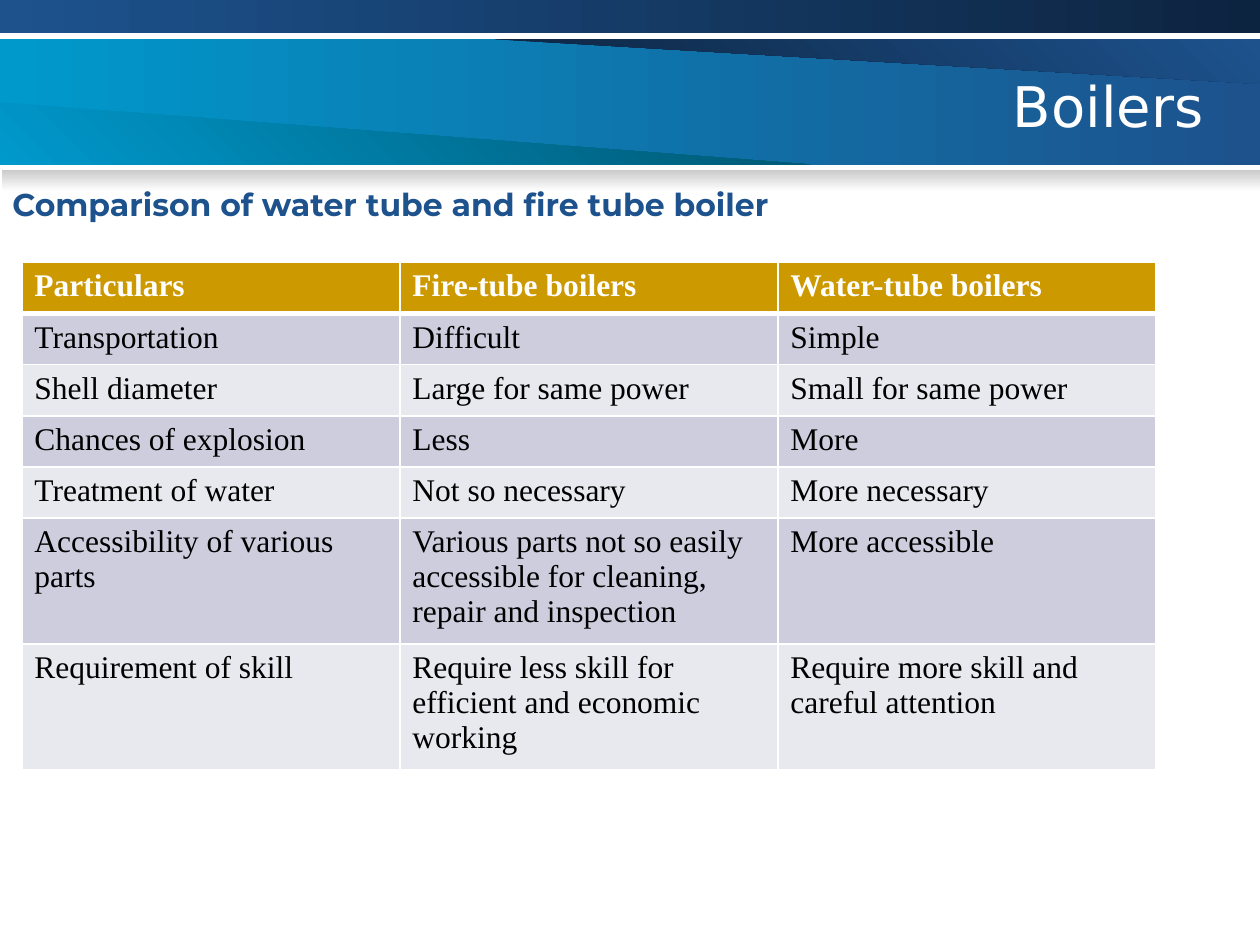
import pptx
import pptx.util
import pptx.dml.color
import pptx.enum.shapes
import pptx.enum.text
import pptx.oxml

Pt = pptx.util.Pt
RGBColor = pptx.dml.color.RGBColor

WHITE = RGBColor(0xFF, 0xFF, 0xFF)
BLACK = RGBColor(0x00, 0x00, 0x00)
NAVY = RGBColor(0x1D, 0x52, 0x8D)
DARK_NAVY = RGBColor(0x0D, 0x24, 0x40)
CYAN = RGBColor(0x00, 0x99, 0xCC)
DARK_CYAN = RGBColor(0x00, 0x55, 0x70)
GREY = RGBColor(0xCA, 0xCA, 0xCA)
GOLD = RGBColor(0xCC, 0x99, 0x00)
BAND_DARK = RGBColor(0xCD, 0xCD, 0xDE)
BAND_LIGHT = RGBColor(0xE8, 0xE8, 0xEF)


def paint_gradient(sp, start, end, angle):
    """Fill sp from start to end; angle is counter-clockwise in degrees."""
    sp.shadow.inherit = False
    sp.line.fill.background()
    sp.fill.gradient()
    sp.fill.gradient_angle = angle
    for stop, color in zip(sp.fill.gradient_stops, (start, end)):
        stop.color.rgb = color


def set_border(cell, side, width):
    cell._tc.get_or_add_tcPr().append(pptx.oxml.parse_xml(
        f'<a:ln{side} xmlns:a="http://schemas.openxmlformats.org/drawingml/2006/main" '
        f'w="{Pt(width)}"><a:solidFill><a:srgbClr val="{WHITE}"/></a:solidFill></a:ln{side}>'))


prs = pptx.Presentation()
prs.slide_width, prs.slide_height = Pt(720), Pt(540)
s = prs.slides.add_slide(prs.slide_layouts[6])

# Header bands: main band, its two wedges, top strip and the shade below
bands = [
    (0, 22.4, 720, 72, CYAN, NAVY, 0),
    (0, 0, 720, 18.8, NAVY, DARK_NAVY, 0),
    (0.9, 97, 719.1, 12.4, GREY, WHITE, 270),
]
for left, top, width, height, start, end, angle in bands:
    sp = s.shapes.add_shape(pptx.enum.shapes.MSO_SHAPE.RECTANGLE,
                            Pt(left), Pt(top), Pt(width), Pt(height))
    paint_gradient(sp, start, end, angle)

wedges = [
    ([(283, 22.4), (720, 48), (720, 22.4)], DARK_NAVY, NAVY),
    ([(0, 58.5), (463, 94), (0, 94)], CYAN, DARK_CYAN),
]
for corners, start, end in wedges:
    points = [(Pt(x), Pt(y)) for x, y in corners]
    builder = s.shapes.build_freeform(*points[0])
    builder.add_line_segments(points[1:], close=True)
    paint_gradient(builder.convert_to_shape(), start, end, 45)

# Title and subtitle
texts = [
    ("Boilers", (93.6, 31.7, 601.2, 56.9), "DejaVu Sans", 32, WHITE, False,
     pptx.enum.text.PP_ALIGN.RIGHT, pptx.enum.text.MSO_ANCHOR.MIDDLE),
    ("Comparison of water tube and fire tube boiler", (0, 102.3, 479.5, 29), "Montserrat", 18,
     NAVY, True, pptx.enum.text.PP_ALIGN.LEFT, pptx.enum.text.MSO_ANCHOR.TOP),
]
for text, box, font, size, color, bold, align, anchor in texts:
    tf = s.shapes.add_textbox(*map(Pt, box)).text_frame
    tf.word_wrap = align == pptx.enum.text.PP_ALIGN.RIGHT
    tf.vertical_anchor = anchor
    p = tf.paragraphs[0]
    p.text = text
    p.alignment = align
    r = p.runs[0]
    r.font.name, r.font.size, r.font.bold = font, Pt(size), bold
    r.font.color.rgb = color

# Comparison table
rows = [
    ("Particulars", "Fire-tube boilers", "Water-tube boilers"),
    ("Transportation", "Difficult", "Simple"),
    ("Shell diameter", "Large for same power", "Small for same power"),
    ("Chances of explosion", "Less", "More"),
    ("Treatment of water", "Not so necessary", "More necessary"),
    ("Accessibility of various parts",
     "Various parts not so easily accessible for cleaning, repair and inspection",
     "More accessible"),
    ("Requirement of skill", "Require less skill for efficient and economic working",
     "Require more skill and careful attention"),
]
heights = [29.2] * 5 + [72] * 2
table = s.shapes.add_table(len(rows), 3, Pt(12.5), Pt(150), Pt(648), Pt(sum(heights))).table
for column in table.columns:
    column.width = Pt(216)
for i, (row, height) in enumerate(zip(rows, heights)):
    table.rows[i].height = Pt(height)
    header = i == 0
    fill = GOLD if header else (BAND_LIGHT, BAND_DARK)[i % 2]
    for j, text in enumerate(row):
        cell = table.cell(i, j)
        for side, width in (("L", 1), ("R", 1), ("T", 3 if i == 1 else 1),
                            ("B", 3 if header else 1)):
            set_border(cell, side, width)
        cell.fill.solid()
        cell.fill.fore_color.rgb = fill
        cell.text_frame.text = text
        r = cell.text_frame.paragraphs[0].runs[0]
        r.font.name, r.font.size, r.font.bold = "Times New Roman", Pt(18), header
        r.font.color.rgb = WHITE if header else BLACK

prs.save("out.pptx")
